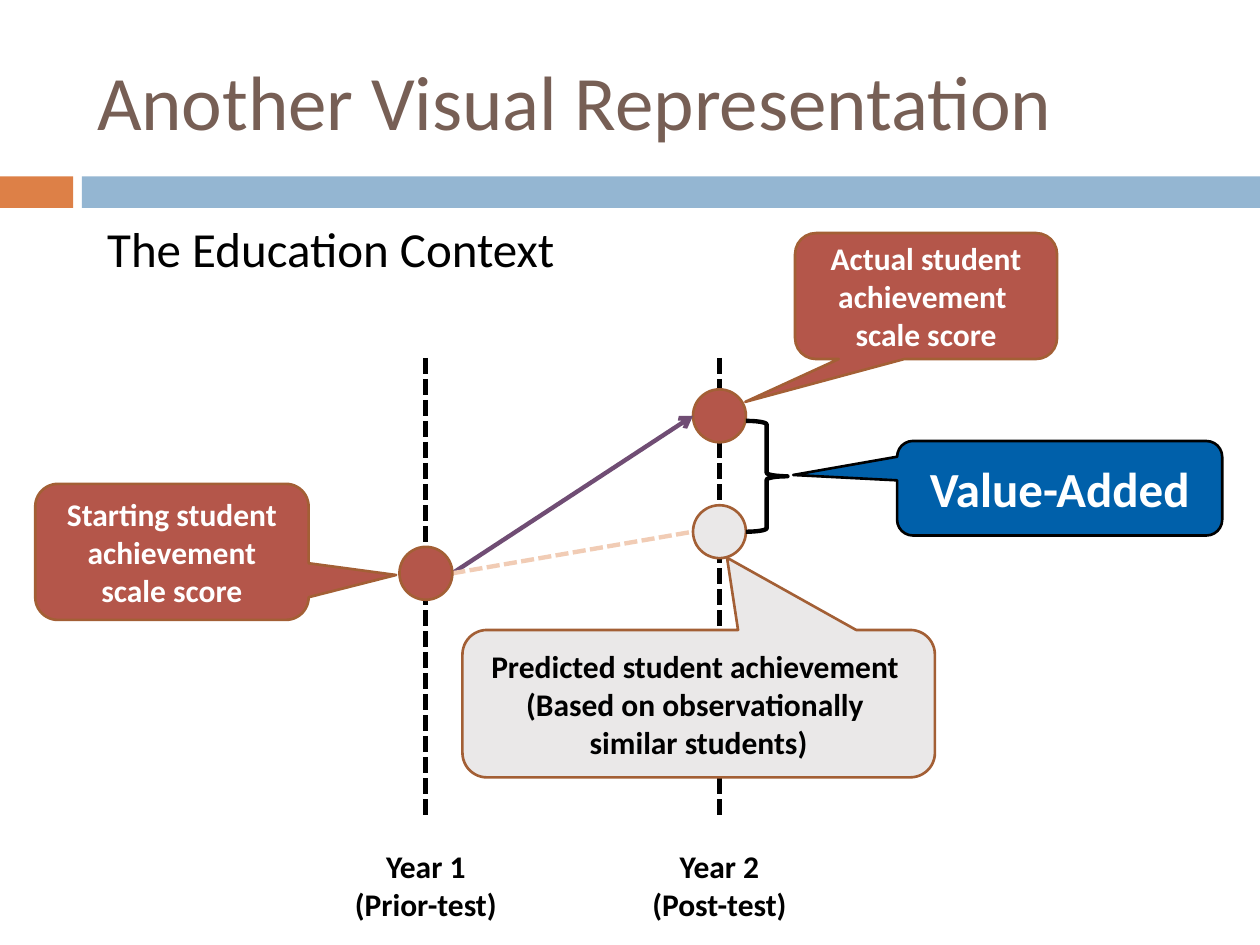
from lxml.etree import SubElement
from pptx import Presentation
from pptx.dml.color import RGBColor
from pptx.enum.dml import MSO_LINE
from pptx.enum.shapes import MSO_CONNECTOR, MSO_SHAPE
from pptx.enum.text import MSO_ANCHOR, MSO_AUTO_SIZE, PP_ALIGN
from pptx.oxml.ns import qn
from pptx.util import Inches, Pt

BLACK = RGBColor(0x00, 0x00, 0x00)
WHITE = RGBColor(0xFF, 0xFF, 0xFF)
BROWN = RGBColor(0x77, 0x5F, 0x55)
ORANGE = RGBColor(0xDD, 0x80, 0x47)
LIGHT_BLUE = RGBColor(0x94, 0xB6, 0xD2)
DEEP_BLUE = RGBColor(0x00, 0x60, 0xAA)
RED = RGBColor(0xB4, 0x56, 0x4A)
RUST = RGBColor(0xA3, 0x5F, 0x35)
PALE_GRAY = RGBColor(0xEA, 0xE8, 0xE8)
PURPLE = RGBColor(0x70, 0x4D, 0x74)
PEACH = RGBColor(0xF1, 0xCC, 0xB5)

LABEL = {"size": Pt(18), "bold": True}
YEAR_1, YEAR_2 = 3.38, 5.71
RADIUS = 0.21
START, ACTUAL, PREDICTED = 4.55, 3.3, 4.22


class SlideBuilder:
    """Holds the shared style and the slide being built."""

    font_name = "Calibri"

    def __init__(self, slide):
        self.slide = slide

    def fill_text(self, frame, lines, align=PP_ALIGN.CENTER, color=BLACK, **formats):
        frame.vertical_anchor = MSO_ANCHOR.MIDDLE
        for index, line in enumerate(lines):
            para = frame.paragraphs[0] if index == 0 else frame.add_paragraph()
            para.text = line
            para.alignment = align
            for span in para.runs:
                span.font.color.rgb = color
                for name, value in {"name": self.font_name, **formats}.items():
                    setattr(span.font, name, value)

    def title(self, text, *place):
        box = self.slide.shapes.title
        box.left, box.top, box.width, box.height = map(Inches, place)
        box.text_frame.auto_size = MSO_AUTO_SIZE.NONE
        self.fill_text(box.text_frame, [text], PP_ALIGN.LEFT, BROWN, size=Pt(44))

    def text(self, lines, *place, wrap=True, **formats):
        box = self.slide.shapes.add_textbox(*map(Inches, place))
        box.text_frame.word_wrap = wrap
        self.fill_text(box.text_frame, lines, **formats)

    def shape(self, kind, *place, fill=None, line=None, width=1.5):
        shape = self.slide.shapes.add_shape(kind, *map(Inches, place))
        shape.shadow.inherit = False
        for part, color in ((shape.fill, fill), (shape.line.fill, line)):
            if color is None:
                part.background()
            else:
                part.solid()
                part.fore_color.rgb = color
        if line is not None:
            shape.line.width = Pt(width)
        return shape

    def score(self, x, y, fill):
        size = 2 * RADIUS
        self.shape(MSO_SHAPE.OVAL, x - RADIUS, y - RADIUS, size, size, fill=fill, line=RUST)

    def callout(self, text, *place, pointer, fill=RED, line=RUST, **formats):
        shape = self.shape(MSO_SHAPE.ROUNDED_RECTANGULAR_CALLOUT, *place, fill=fill, line=line)
        for index, value in enumerate(pointer):
            shape.adjustments[index] = value
        self.fill_text(shape.text_frame, [text], **{**LABEL, "color": WHITE, **formats})

    def line(self, *ends, color=BLACK, width=2.5, dash=None, arrow=False):
        line = self.slide.shapes.add_connector(MSO_CONNECTOR.STRAIGHT, *map(Inches, ends))
        line.line.color.rgb = color
        line.line.width = Pt(width)
        if dash is not None:
            line.line.dash_style = dash
        properties = line._element.spPr
        if arrow:
            SubElement(properties.find(qn("a:ln")), qn("a:tailEnd"), type="arrow")
        SubElement(properties, qn("a:effectLst"))

    def year(self, x, name, test):
        self.line(x, 2.84, x, 6.5, width=3, dash=MSO_LINE.SQUARE_DOT)
        self.text([name, test], x - 0.67, 6.67, 1.34, 0.71, wrap=False, **LABEL)


def main():
    deck = Presentation()
    deck.slide_width, deck.slide_height = Inches(10), Inches(7.5)
    page = SlideBuilder(deck.slides.add_slide(deck.slide_layouts[5]))

    page.shape(MSO_SHAPE.RECTANGLE, 0, 1.4, 0.58, 0.25, fill=ORANGE)
    page.shape(MSO_SHAPE.RECTANGLE, 0.65, 1.4, 9.35, 0.25, fill=LIGHT_BLUE)
    page.title("Another Visual Representation", 0.67, 0.25, 8.92, 1.08)

    page.year(YEAR_2, "Year 2", "(Post-test)")
    page.score(YEAR_2, ACTUAL, RED)
    page.line(YEAR_1 + RADIUS, START, YEAR_2 - RADIUS, ACTUAL, color=PURPLE, arrow=True)
    page.callout("Actual student achievement \nscale score", 6.31, 1.85, 2.08, 1,
                 pointer=(-0.69, 0.84))

    page.score(YEAR_2, PREDICTED, PALE_GRAY)
    page.line(YEAR_1 + RADIUS, START, YEAR_2 - RADIUS, PREDICTED, color=PEACH,
              dash=MSO_LINE.SQUARE_DOT)
    page.callout("Predicted student achievement \n(Based on observationally \nsimilar students)",
                 3.67, 5, 3.75, 1.17, pointer=(0.06, -0.99), fill=PALE_GRAY, color=BLACK)

    page.shape(MSO_SHAPE.RIGHT_BRACE, 5.92, 3.34, 0.33, 0.88, line=BLACK, width=2.5)
    page.callout("Value-Added", 7.12, 3.5, 2.58, 0.75, pointer=(-0.82, -0.14),
                 fill=DEEP_BLUE, line=BLACK, size=Pt(28))

    page.year(YEAR_1, "Year 1", "(Prior-test)")
    page.score(YEAR_1, START, RED)
    page.callout("Starting student achievement scale score", 0.28, 3.84, 2.17, 1.08,
                 pointer=(0.82, 0.17))

    page.text(["The Education Context"], 0.25, 1.59, 4.75, 0.75, size=Pt(28))
    deck.save("out.pptx")


if __name__ == "__main__":
    main()
